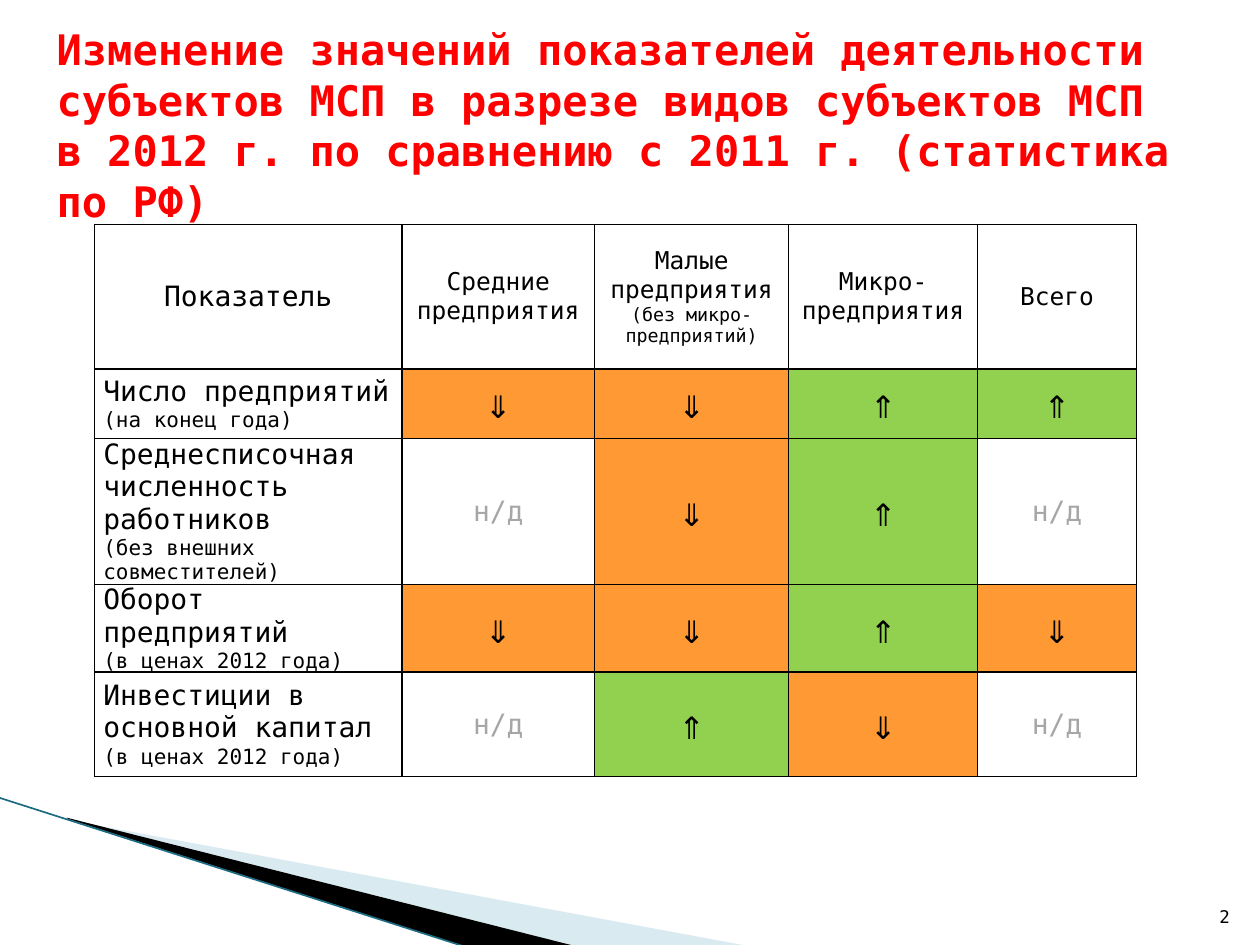
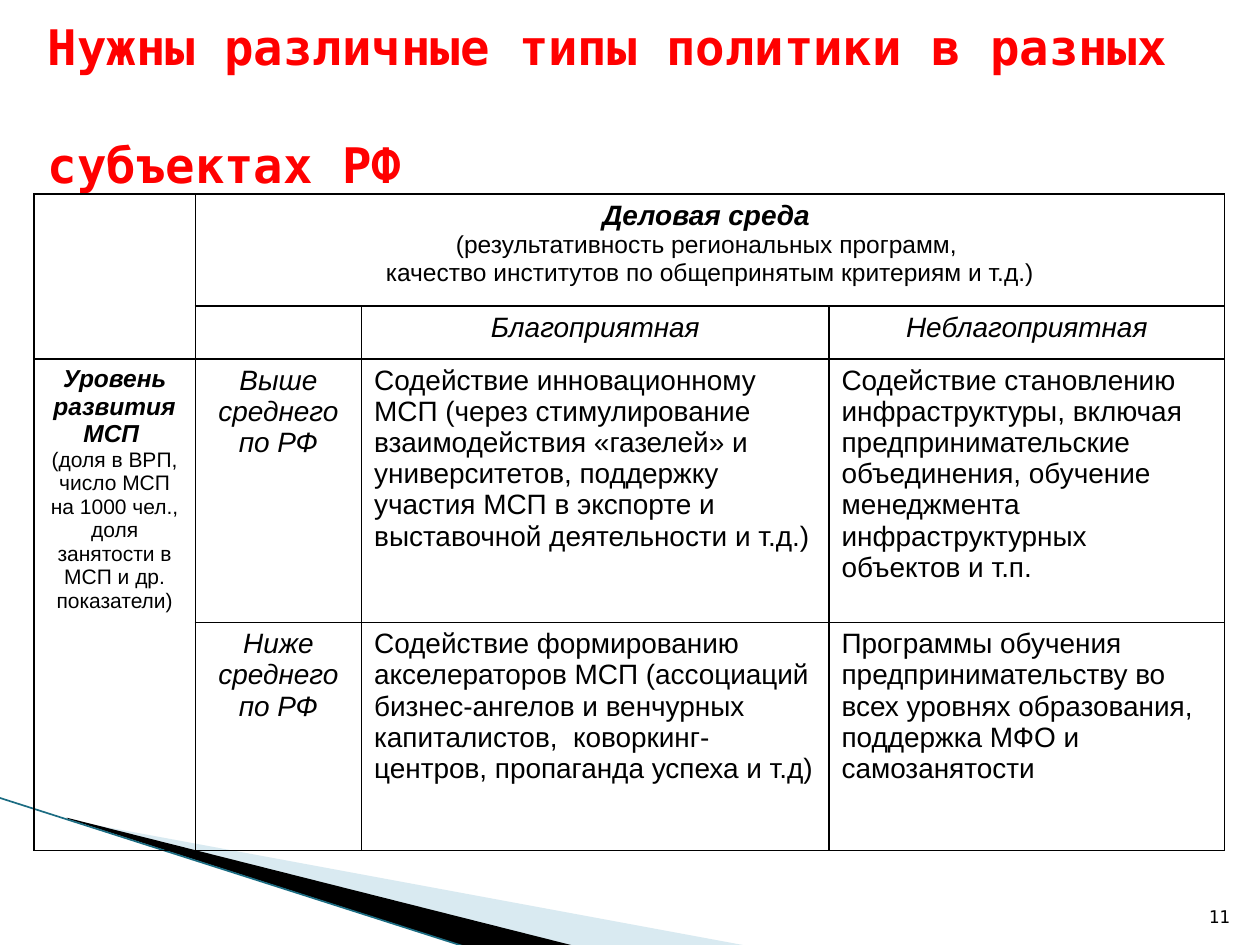
from lxml import etree
from pptx import Presentation
from pptx.dml.color import RGBColor
from pptx.enum import shapes, text
from pptx.oxml.ns import qn
from pptx.util import Inches, Pt

RED = RGBColor(0xFF, 0, 0)
BLACK = RGBColor(0, 0, 0)
GREY = RGBColor(0xA6, 0xA6, 0xA6)
ORANGE = RGBColor(0xFF, 0x99, 0x33)
GREEN = RGBColor(0x92, 0xD0, 0x50)
PALE = RGBColor(0xA0, 0xCB, 0xDC)
TEAL = RGBColor(0x1B, 0x6C, 0x82)
MONO, SANS = "DejaVu Sans Mono", "Arial"
LEFT, MID, RIGHT = (text.PP_ALIGN.LEFT, text.PP_ALIGN.CENTER,
                    text.PP_ALIGN.RIGHT)


def write(frame, paras, face, align=LEFT, color=BLACK):
    """Fill a text frame; each paragraph is a list of (text, size, style) runs,
    where style holds b for bold and i for italic."""
    for num, runs in enumerate(paras):
        para = frame.add_paragraph() if num else frame.paragraphs[0]
        para.alignment = align
        for words, size, style in runs:
            run = para.add_run()
            run.text = words
            font = para.font if len(runs) == 1 else run.font
            font.name, font.size = face, Pt(size)
            font.bold, font.italic = "b" in style, "i" in style
            font.color.rgb = color


def add_grid(slide, left, top, cols, rows):
    """Add an unfilled table with thin black borders."""
    grid = slide.shapes.add_table(
        len(rows), len(cols), Inches(left), Inches(top),
        Inches(sum(cols)), Inches(sum(rows))).table
    grid.first_row = grid.horz_banding = False
    for col, width in zip(grid.columns, cols):
        col.width = Inches(width)
    for row, height in zip(grid.rows, rows):
        row.height = Inches(height)
    for cell in grid.iter_cells():
        cell.fill.background()
        props = cell._tc.get_or_add_tcPr()
        for pos, side in enumerate(("lnL", "lnR", "lnT", "lnB")):
            line = etree.Element(qn("a:" + side), w=str(Pt(1)))
            paint = etree.SubElement(line, qn("a:solidFill"))
            etree.SubElement(paint, qn("a:srgbClr"), val=str(BLACK))
            props.insert(pos, line)
    return grid


deck = Presentation()
deck.slide_width, deck.slide_height = Inches(10), Inches(7.5)
layout = deck.slide_layouts[5]

# Titles and page numbers
pages = [
    ("2", (0.35, 0.13, 9.15, 1.42), 24, 18,
     "\vИзменение значений показателей деятельности субъектов МСП в разрезе "
     "видов субъектов МСП в 2012 г. по сравнению с 2011 г. "
     "(статистика по РФ)"),
    ("11", (0.28, 0.21, 9.22, 1.25), 28, 28,
     "Нужны различные типы политики в разных \vсубъектах РФ"),
]
slides = []
for number, place, size, gap, words in pages:
    slide = deck.slides.add_slide(layout)
    slides.append(slide)
    title = slide.shapes.title
    title.left, title.top, title.width, title.height = map(Inches, place)
    frame = title.text_frame
    frame.text = words
    frame.word_wrap = True
    frame.auto_size = text.MSO_AUTO_SIZE.NONE
    frame.vertical_anchor = text.MSO_ANCHOR.MIDDLE
    para = frame.paragraphs[0]
    para.alignment = LEFT
    para.font.name, para.font.size = MONO, Pt(size)
    para.font.bold = True
    para.font.color.rgb = RED
    for brk in title.element.iter(qn("a:br")):
        props = etree.SubElement(brk, qn("a:rPr"), sz=str(gap * 100))
        etree.SubElement(props, qn("a:latin"), typeface=MONO)

    box = slide.shapes.add_textbox(*map(Inches, (9.46, 7.01, 0.4, 0.4)))
    box.text_frame.word_wrap = True
    box.text_frame.vertical_anchor = text.MSO_ANCHOR.BOTTOM
    write(box.text_frame, [[(number, 10, "")]], MONO, RIGHT)

# Corner wedges in hundredths of an inch, moved to the shared layout
draw = slides[0].shapes
wedges = [
    (PALE, [(55, 651), (595, 751), (456, 751), (55, 650)]),
    (BLACK, [(53, 649), (457, 751), (372, 752), (54, 650)]),
]
decor = []
for color, points in wedges:
    path = draw.build_freeform(*points[0], scale=Inches(0.01))
    path.add_line_segments(points[1:])
    wedge = path.convert_to_shape()
    wedge.shadow.inherit = False
    wedge.fill.solid()
    wedge.fill.fore_color.rgb = color
    wedge.line.fill.background()
    decor.append(wedge)
tint = decor[0].element.spPr.find(".//" + qn("a:srgbClr"))
etree.SubElement(tint, qn("a:alpha"), val="40000")
edge = draw.add_connector(shapes.MSO_CONNECTOR.STRAIGHT, Inches(-0.01),
                          Inches(6.33), Inches(3.71), Inches(7.52))
edge.line.color.rgb = TEAL
edge.line.width = Pt(0.95)
etree.SubElement(edge.element.spPr, qn("a:effectLst"))
for item in decor + [edge]:
    layout.shapes.element.append(item.element)

# Slide 1: change by type of enterprise
heads = [
    [("Показатель", 16, "")],
    [("Средние предприятия", 14, "")],
    [("Малые предприятия ", 14, ""), ("(без микро-предприятий)", 10.5, "")],
    [("Микро-предприятия", 14, "")],
    [("Всего", 14, "")],
]
price = [("(в ценах 2012 года)", 12, "")]
trends = [
    ([[("Число предприятий ", 16, ""), ("(на конец года)", 12, "")]],
     "⇓⇓⇑⇑"),
    ([[("Среднесписочная численность работников", 16, "")],
      [("(без внешних совместителей)", 12, "")]], "-⇓⇑-"),
    ([[("Оборот предприятий", 16, "")], price], "⇓⇓⇑⇓"),
    ([[("Инвестиции в основной капитал", 16, "")], price], "-⇑⇓-"),
]
grid = add_grid(slides[0], 0.75, 1.78, [2.44, 1.53, 1.54, 1.5, 1.26],
                [1.15, 0.55, 1.1, 0.55, 0.83])
for cell in grid.iter_cells():
    cell.vertical_anchor = text.MSO_ANCHOR.MIDDLE
    cell.margin_left = cell.margin_right = Inches(0.07)
    cell.margin_top = cell.margin_bottom = Inches(-0.02)
for col, head in enumerate(heads):
    write(grid.cell(0, col).text_frame, [head], MONO, MID)
for row, (label, marks) in enumerate(trends, 1):
    write(grid.cell(row, 0).text_frame, label, MONO)
    for col, mark in enumerate(marks, 1):
        cell = grid.cell(row, col)
        if mark == "-":
            write(cell.text_frame, [[("н/д", 16, "")]], MONO, MID, GREY)
        else:
            write(cell.text_frame, [[(mark, 24, "")]], MONO, MID)
            cell.fill.solid()
            cell.fill.fore_color.rgb = GREEN if mark == "⇑" else ORANGE

# Slide 2: policy by environment and level
grid = add_grid(slides[1], 0.27, 1.54, [1.28, 1.32, 3.71, 3.14],
                [0.89, 0.42, 2.09, 1.81])
for first, last in [((0, 0), (1, 0)), ((0, 1), (0, 3)), ((2, 0), (3, 0))]:
    grid.cell(*first).merge(grid.cell(*last))
write(grid.cell(0, 1).text_frame, [
    [("Деловая среда ", 16, "bi")],
    [("(результативность региональных программ, ", 14, "")],
    [("качество институтов по общепринятым критериям и т.д.)", 14, "")],
], SANS, MID)
write(grid.cell(2, 0).text_frame, [
    [("Уровень развития МСП ", 14, "bi")],
    [("(доля в ВРП, число МСП на 1000 чел., доля занятости в МСП "
      "и др. показатели)", 12, "")],
], SANS, MID)
labels = {(1, 2): "Благоприятная", (1, 3): "Неблагоприятная",
          (2, 1): "Выше среднего по РФ", (3, 1): "Ниже среднего по РФ"}
for spot, words in labels.items():
    write(grid.cell(*spot).text_frame, [[(words, 16, "i")]], SANS, MID)
plans = {
    (2, 2): "Содействие инновационному МСП (через стимулирование "
            "взаимодействия «газелей» и университетов, поддержку участия МСП "
            "в экспорте и выставочной деятельности и т.д.)",
    (2, 3): "Содействие становлению инфраструктуры, включая "
            "предпринимательские объединения, обучение менеджмента "
            "инфраструктурных объектов и т.п.",
    (3, 2): "Содействие формированию акселераторов МСП (ассоциаций "
            "бизнес-ангелов и венчурных капиталистов,  коворкинг-центров, "
            "пропаганда успеха и т.д)",
    (3, 3): "Программы обучения предпринимательству во всех уровнях "
            "образования, поддержка МФО и самозанятости",
}
for spot, words in plans.items():
    write(grid.cell(*spot).text_frame, [[(words, 16, "")]], SANS)

deck.save("out.pptx")
